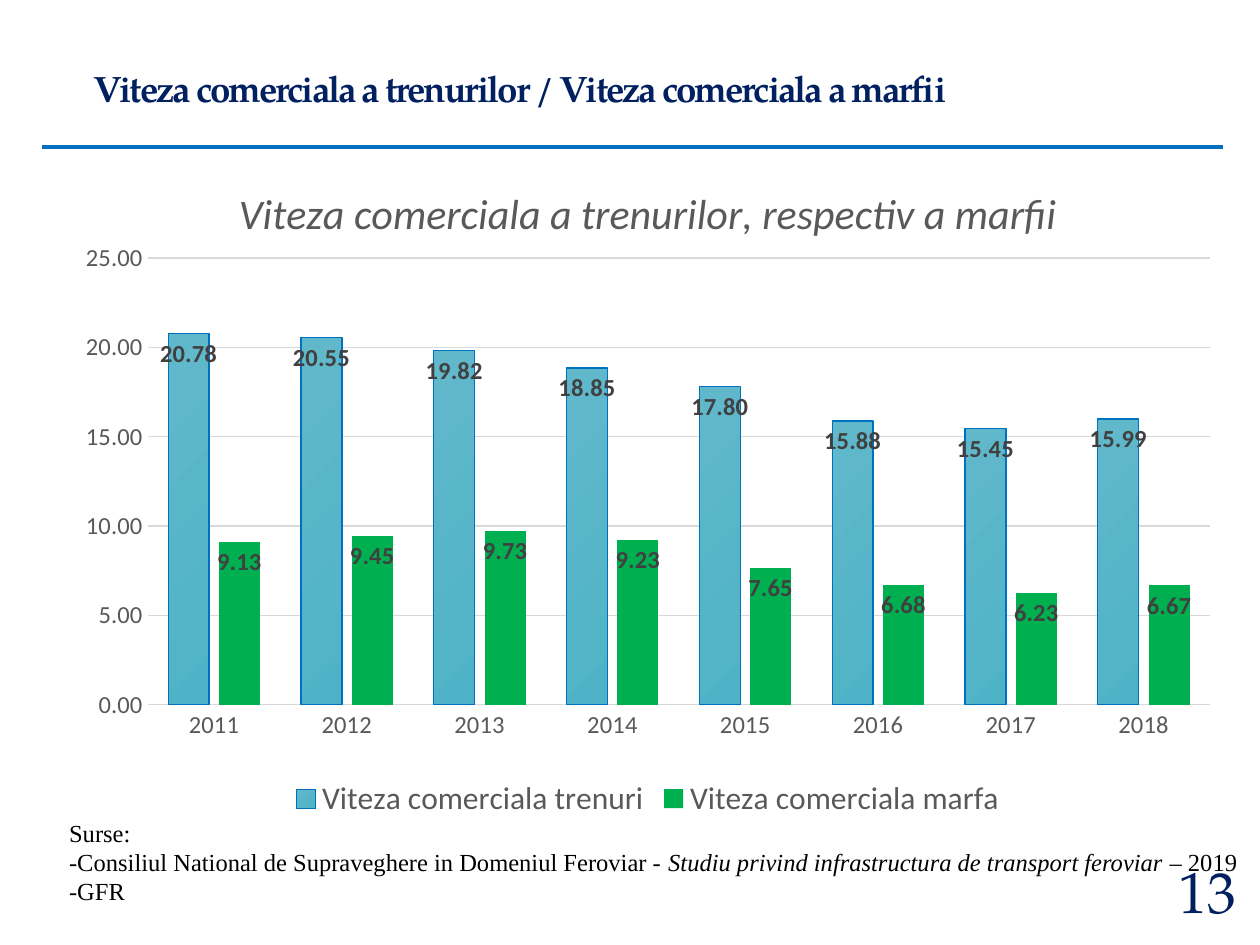
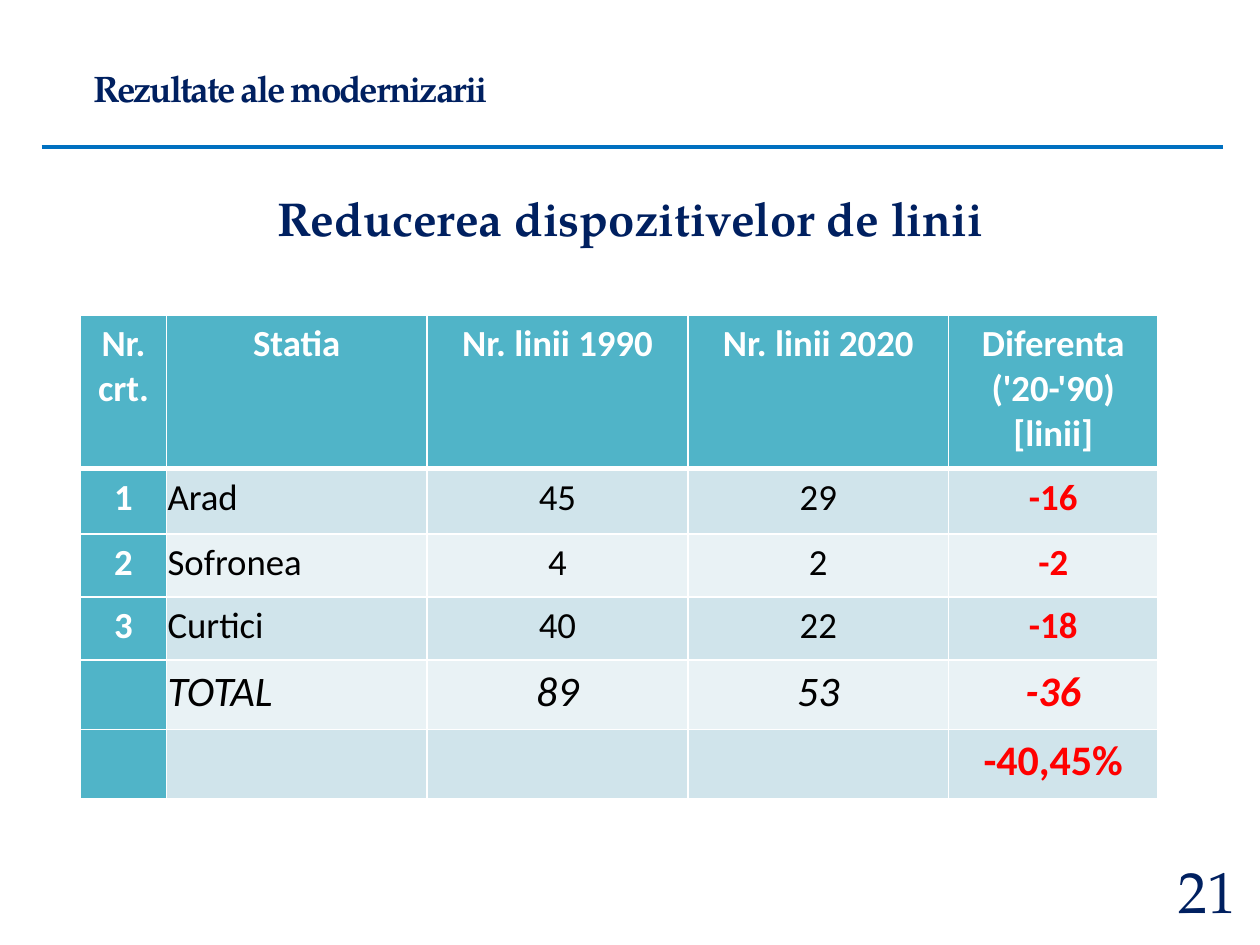
from lxml import etree
from pptx import Presentation
from pptx.chart.data import CategoryChartData
from pptx.dml.color import RGBColor
from pptx.enum.chart import XL_CHART_TYPE, XL_LABEL_POSITION, XL_LEGEND_POSITION, XL_TICK_MARK
from pptx.enum.shapes import MSO_CONNECTOR
from pptx.enum.text import MSO_ANCHOR, MSO_AUTO_SIZE, PP_ALIGN
from pptx.oxml import parse_xml
from pptx.oxml.ns import nsdecls, qn
from pptx.util import Inches, Pt

COLORS = {
    "navy": "002060", "blue": "0070C0", "green": "00B050", "red": "FF0000",
    "black": "000000", "white": "FFFFFF", "gray": "595959", "label": "404040",
    "grid": "D9D9D9", "teal": "50B4C8", "teal_light": "60B8CA", "teal_dark": "4FB3C7",
    "band_dark": "D0E4EB", "band_light": "E9F2F5",
}
SERIF, SANS, NOTE = "TeX Gyre Pagella", "Calibri", "Times New Roman"


def rgb(name):
    return RGBColor.from_string(COLORS[name])


class Deck:
    def __init__(self):
        self.prs = Presentation()
        self.prs.slide_width, self.prs.slide_height = Inches(10), Inches(7.5)
        self.s = None

    def style(self, font, size, color, face, bold=False, italic=False):
        font.name, font.size = face, Pt(size)
        font.bold, font.italic = bold, italic
        font.color.rgb = rgb(color)

    def run(self, p, text, *look, **kind):
        r = p.add_run()
        r.text = text
        self.style(r.font, *look, **kind)
        return r

    def slide(self, title, number):
        self.s = self.prs.slides.add_slide(self.prs.slide_layouts[5])
        self.title(title)
        self.rule()
        p = self.box(9.21, 6.95, 0.7, 0.44, MSO_ANCHOR.BOTTOM).paragraphs[0]
        p.alignment = PP_ALIGN.RIGHT
        self.run(p, str(number), 33, "navy", SERIF)

    def title(self, text):
        sp = self.s.shapes.title
        sp.left, sp.top, sp.width, sp.height = map(Inches, (0.64, 0.46, 8.62, 0.52))
        tf = sp.text_frame
        tf.auto_size = MSO_AUTO_SIZE.NONE
        tf.vertical_anchor = MSO_ANCHOR.MIDDLE
        p = tf.paragraphs[0]
        p.alignment, p.line_spacing = PP_ALIGN.LEFT, 0.9
        r = self.run(p, text, 21, "navy", SERIF, bold=True)
        r.font._element.set("spc", "-120")

    def rule(self):
        line = self.s.shapes.add_connector(
            MSO_CONNECTOR.STRAIGHT, Inches(0.33), Inches(1.17), Inches(9.71), Inches(1.17))
        line.line.color.rgb, line.line.width = rgb("blue"), Pt(2.25)
        etree.SubElement(line._element.spPr, qn("a:effectLst"))

    def box(self, x, y, w, h, anchor=MSO_ANCHOR.TOP):
        tf = self.s.shapes.add_textbox(*map(Inches, (x, y, w, h))).text_frame
        tf.word_wrap, tf.vertical_anchor = True, anchor
        return tf

    def heading(self, text):
        p = self.box(1.25, 1.57, 7.5, 0.44, MSO_ANCHOR.BOTTOM).paragraphs[0]
        p.alignment, p.line_spacing = PP_ALIGN.CENTER, 0.9
        self.run(p, text, 27, "navy", SERIF, bold=True)

    def sources(self, lines):
        tf = self.box(0.45, 6.44, 9.71, 0.8)
        for i, parts in enumerate(lines):
            p = tf.add_paragraph() if i else tf.paragraphs[0]
            for text, italic in parts:
                self.run(p, text, 14, "black", NOTE, italic=italic)

    def column_chart(self, title, categories, series):
        data = CategoryChartData(number_format="0.00")
        data.categories = categories
        for name, values in series.items():
            data.add_series(name, values)
        chart = self.s.shapes.add_chart(
            XL_CHART_TYPE.COLUMN_CLUSTERED, *map(Inches, (0.45, 1.25, 9.38, 5.29)), data).chart
        self.style(chart.font, 14, "gray", SANS)
        chart.has_title = True
        self.run(chart.chart_title.text_frame.paragraphs[0], title, 24, "gray", SANS, italic=True)
        chart.chart_title.include_in_layout = False
        chart.has_legend = True
        chart.legend.position = XL_LEGEND_POSITION.BOTTOM
        chart.legend.include_in_layout = False
        self.style(chart.legend.font, 18, "gray", SANS)
        self.axes(chart)
        self.columns(chart.plots[0])
        self.plot_area(chart, 0.077, 0.151, 0.899, 0.67)

    def axes(self, chart):
        for axis in (chart.category_axis, chart.value_axis):
            axis.major_tick_mark = axis.minor_tick_mark = XL_TICK_MARK.NONE
            self.style(axis.tick_labels.font, 14, "gray", SANS)
        chart.category_axis.format.line.color.rgb = rgb("grid")
        chart.category_axis.format.line.width = Pt(1)
        values = chart.value_axis
        values.minimum_scale, values.maximum_scale, values.major_unit = 0, 25, 5
        values.tick_labels.number_format = "0.00"
        values.tick_labels.number_format_is_linked = False
        values.format.line.fill.background()
        values.major_gridlines.format.line.color.rgb = rgb("grid")
        values.major_gridlines.format.line.width = Pt(0.75)

    def columns(self, plot):
        plot.gap_width, plot.overlap, plot.vary_by_categories = 100, -24, False
        trains, freight = plot.series
        fill = trains.format.fill
        fill.gradient()
        fill.gradient_angle = 315
        for stop, color in zip(fill.gradient_stops, ("teal_light", "teal_dark")):
            stop.color.rgb = rgb(color)
        trains.format.line.color.rgb, trains.format.line.width = rgb("blue"), Pt(0.75)
        freight.format.fill.solid()
        freight.format.fill.fore_color.rgb = rgb("green")
        for ser in plot.series:
            labels = ser.data_labels
            labels.show_value = True
            labels.position = XL_LABEL_POSITION.INSIDE_END
            labels.number_format, labels.number_format_is_linked = "0.00", False
            self.style(labels.font, 14, "label", SANS, bold=True)

    def plot_area(self, chart, x, y, w, h):
        area = chart._chartSpace.chart.plotArea
        for old in area.findall(qn("c:layout")):
            area.remove(old)
        area.insert(0, parse_xml(
            f'<c:layout {nsdecls("c")}><c:manualLayout><c:layoutTarget val="inner"/>'
            '<c:xMode val="edge"/><c:yMode val="edge"/>'
            f'<c:x val="{x}"/><c:y val="{y}"/><c:w val="{w}"/><c:h val="{h}"/>'
            '</c:manualLayout></c:layout>'))

    def borders(self, cell, row):
        thick = {0: "B", 1: "T"}.get(row)
        for side in "LRTB":
            width = Pt(3 if side == thick else 0.96)
            cell._tc.get_or_add_tcPr().append(parse_xml(
                f'<a:ln{side} {nsdecls("a")} w="{width}"><a:solidFill>'
                f'<a:srgbClr val="{COLORS["white"]}"/></a:solidFill></a:ln{side}>'))

    def table(self, rows, widths, heights):
        table = self.s.shapes.add_table(
            len(rows), len(widths), Inches(0.64), Inches(2.5),
            Inches(sum(widths)), Inches(sum(heights))).table
        for col, width in zip(table.columns, widths):
            col.width = Inches(width)
        for i, (values, height) in enumerate(zip(rows, heights)):
            table.rows[i].height = Inches(height)
            for j, text in enumerate(values):
                self.cell(table.cell(i, j), text, i, j, len(widths) - 1)

    def cell(self, cell, text, row, col, last):
        self.borders(cell, row)
        header = row == 0 or col == 0
        band = "band_dark" if row % 2 else "band_light"
        cell.fill.solid()
        cell.fill.fore_color.rgb = rgb("teal" if header else band)
        cell.margin_left = cell.margin_right = Inches(0.01)
        if not text:
            return
        p = cell.text_frame.paragraphs[0]
        p.alignment = PP_ALIGN.LEFT if col == 1 and row else PP_ALIGN.CENTER
        color = "white" if header else "red" if col == last else "black"
        self.run(p, text, 24 if row > 3 else 21, color, SANS,
                 bold=header or col == last, italic=row == 4)


def main():
    deck = Deck()
    deck.slide("Viteza comerciala a trenurilor / Viteza comerciala a marfii", 13)
    deck.column_chart(
        "Viteza comerciala a trenurilor, respectiv a marfii",
        [str(year) for year in range(2011, 2019)],
        {"Viteza comerciala trenuri": (20.78, 20.55, 19.82, 18.85, 17.8, 15.88, 15.45, 15.99),
         "Viteza comerciala marfa": (9.13, 9.45, 9.73, 9.23, 7.65, 6.68, 6.23, 6.67)})
    deck.sources([
        [("Surse:", False)],
        [("-Consiliul National de Supraveghere in Domeniul Feroviar - ", False),
         ("Studiu privind infrastructura de transport feroviar", True),
         (" – 2019", False)],
        [("-GFR", False)]])

    deck.slide("Rezultate ale modernizarii", 21)
    deck.table(
        [("Nr. crt.", "Statia", "Nr. linii 1990", "Nr. linii 2020", "Diferenta ('20-'90) [linii]"),
         ("1", "Arad", "45", "29", "-16"),
         ("2", "Sofronea", "4", "2", "-2"),
         ("3", "Curtici", "40", "22", "-18"),
         ("", "TOTAL", "89", "53", "-36"),
         ("", "", "", "", "-40,45%")],
        (0.68, 2.07, 2.07, 2.07, 1.66),
        (1.22, 0.52, 0.5, 0.5, 0.55, 0.55))
    deck.heading("Reducerea dispozitivelor de linii")
    deck.prs.save("out.pptx")


if __name__ == "__main__":
    main()
